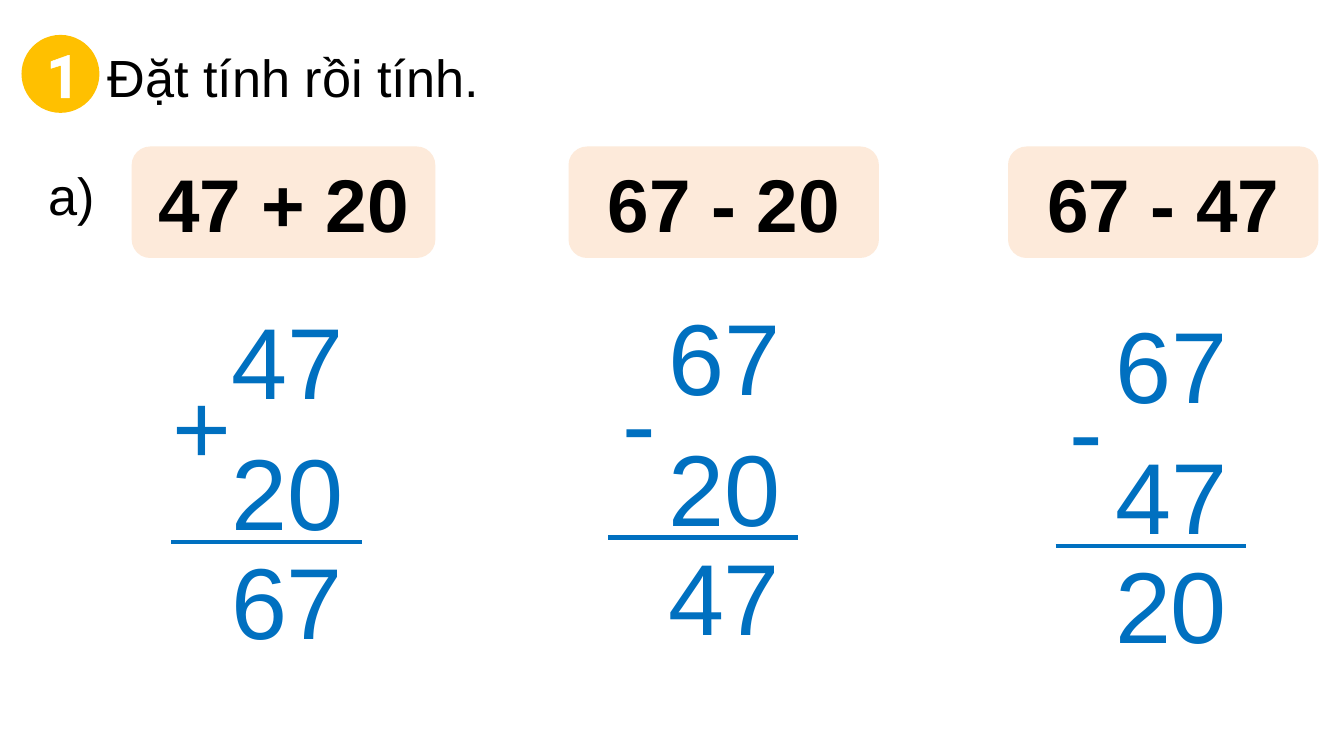
from lxml import etree
from pptx import Presentation
from pptx.dml.color import RGBColor
from pptx.enum.shapes import MSO_CONNECTOR, MSO_SHAPE
from pptx.enum.text import MSO_ANCHOR, MSO_AUTO_SIZE, PP_ALIGN
from pptx.oxml.ns import qn
from pptx.util import Inches, Pt

CENTER, JUSTIFY = PP_ALIGN.CENTER, PP_ALIGN.JUSTIFY
TOP, MIDDLE = MSO_ANCHOR.TOP, MSO_ANCHOR.MIDDLE
OVAL, ROUNDED = MSO_SHAPE.OVAL, MSO_SHAPE.ROUNDED_RECTANGLE
STRAIGHT, NO_AUTOFIT = MSO_CONNECTOR.STRAIGHT, MSO_AUTO_SIZE.NONE

COLORS = {"ink": "000000", "answer": "0070C0", "badge": "FFC000",
          "card": "FDEADA", "white": "FFFFFF"}

CELL = Inches(0.1)  # the 16:9 slide is a grid of square cells
COLUMNS = 100
ROWS = COLUMNS * 9 / 16


def cells(*counts):
    return [round(count * CELL) for count in counts]


def color(name):
    return RGBColor.from_string(COLORS[name])


def write(shape, text, size=28, ink="ink", font="Arial", bold=False,
          align=CENTER, anchor=MIDDLE):
    frame = shape.text_frame
    frame.word_wrap = True
    frame.auto_size = NO_AUTOFIT
    frame.vertical_anchor = anchor
    paragraph = frame.paragraphs[0]
    paragraph.alignment = align
    run = paragraph.add_run()
    run.text = text
    run.font.size, run.font.name, run.font.bold = Pt(size), font, bold
    run.font.color.rgb = color(ink)
    return run


def add_label(slide, box, text, **style):
    return write(slide.shapes.add_textbox(*cells(*box)), text, **style)


def add_panel(slide, preset, box, fill, text, **style):
    panel = slide.shapes.add_shape(preset, *cells(*box))
    panel.shadow.inherit = False
    panel.fill.solid()
    panel.fill.fore_color.rgb = color(fill)
    panel.line.fill.background()
    return write(panel, text, **style)


def outline_text(run, ink, width):
    line = etree.Element(qn("a:ln"), w=str(int(Pt(width))))
    fill = etree.SubElement(line, qn("a:solidFill"))
    etree.SubElement(fill, qn("a:srgbClr"), val=COLORS[ink])
    run.font._element.insert(0, line)


def add_heading(slide, box, number, text):
    left, top, width, height = box
    title = slide.shapes.title
    title.left, title.top, title.width, title.height = cells(
        left + 5.4, top, width - 5.4, height)
    write(title, text, align=JUSTIFY)
    # Numbered badge
    numeral = add_panel(slide, OVAL, (left, top + 1.6, 5.8, 5.8), "badge", number,
                        size=32, ink="white", font="Roboto", bold=True)
    outline_text(numeral, "white", 1.45)


def add_column_sum(slide, box, first, sign, second, result):
    left, top, width, _ = box
    digits = dict(size=54, ink="answer", anchor=TOP)
    number_left, number_width, line_height = left + 6.35, 11.7, 10.1
    # Operands and sign
    for text, x, y in ((first, number_left, 0), (second, number_left, 9.8),
                       (sign, left, 4.9)):
        add_label(slide, (x, top + y, number_width, line_height), text, **digits)
    # Rule under the operands
    rule = slide.shapes.add_connector(
        STRAIGHT, *cells(left + 3.55, top + 18.6, left + width, top + 18.6))
    rule.line.color.rgb = color("answer")
    rule.line.width = Pt(2.25)
    etree.SubElement(rule._element.spPr, qn("a:effectLst"))
    # Result, one digit at a time
    for place, digit in enumerate(result):
        add_label(slide, (number_left + 0.55 + 4.1 * place, top + 17.9, 6.4, line_height),
                  digit, **digits)


def main():
    deck = Presentation()
    deck.slide_width, deck.slide_height = cells(COLUMNS, ROWS)
    slide = deck.slides.add_slide(deck.slide_layouts[5])

    add_heading(slide, (1.6, 1, 74.2, 9.4), "1", "Đặt tính rồi tính.")
    add_label(slide, (2.6, 9.8, 10, 9.4), "a)", align=JUSTIFY)

    # Card left and width, sum left and top, then the calculation
    exercises = (
        (9.8, 22.6, 9.2, 21.7, "47", "+", "20", "67"),
        (42.3, 23.1, 41.7, 21.4, "67", "-", "20", "47"),
        (75, 23.1, 75, 22, "67", "-", "47", "20"),
    )
    for card_left, card_width, sum_left, sum_top, first, sign, second, result in exercises:
        add_panel(slide, ROUNDED, (card_left, 10.9, card_width, 8.3), "card",
                  f"{first} {sign} {second}", size=40, bold=True)
        add_column_sum(slide, (sum_left, sum_top, 17.7, 28), first, sign, second, result)

    deck.save("out.pptx")


if __name__ == "__main__":
    main()
